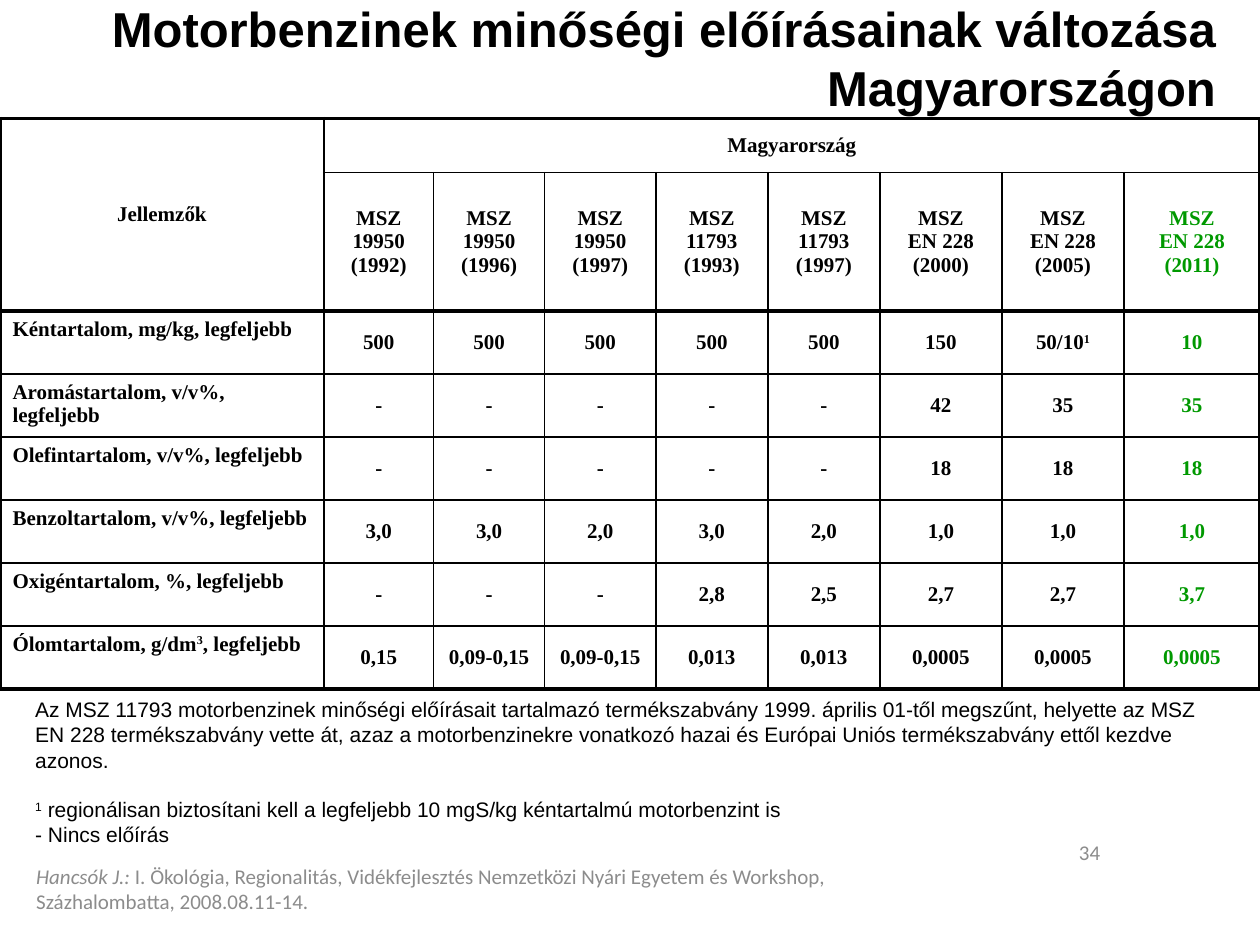
from lxml import etree
from pptx import Presentation
from pptx.dml.color import RGBColor
from pptx.enum import text
from pptx.oxml import ns
from pptx.util import Cm, Pt

BLACK = RGBColor(0x00, 0x00, 0x00)
GREEN = RGBColor(0x00, 0x99, 0x00)
GREY = RGBColor(0x8C, 0x8C, 0x8C)

COLUMN_WIDTHS = [6.53, 2.21, 2.24, 2.24, 2.26, 2.26, 2.46, 2.46, 2.74]
ROW_HEIGHTS = [1.09, 2.79] + [1.27] * 6

# Border weights in points: one per grid line, from the outer edge inwards
VERTICAL_LINES = [2.25, 1.5] + [1] * 7 + [2.25]
HORIZONTAL_LINES = [2.25, 1, 2] + [1] * 5 + [2.25]

# Text between two ^ marks is superscript
STANDARDS = [
    "MSZ\n19950\n(1992)", "MSZ\n19950\n(1996)", "MSZ\n19950\n(1997)",
    "MSZ\n11793\n(1993)", "MSZ\n11793\n(1997)",
    "MSZ\nEN 228\n(2000)", "MSZ\nEN 228\n(2005)", "MSZ\nEN 228\n(2011)",
]
LIMITS = [
    ["Kéntartalom, mg/kg, legfeljebb",
     "500", "500", "500", "500", "500", "150", "50/10^1^", "10"],
    ["Aromástartalom, v/v%, legfeljebb",
     "-", "-", "-", "-", "-", "42", "35", "35"],
    ["Olefintartalom, v/v%, legfeljebb",
     "-", "-", "-", "-", "-", "18", "18", "18"],
    ["Benzoltartalom, v/v%, legfeljebb",
     "3,0", "3,0", "2,0", "3,0", "2,0", "1,0", "1,0", "1,0"],
    ["Oxigéntartalom, %, legfeljebb",
     "-", "-", "-", "2,8", "2,5", "2,7", "2,7", "3,7"],
    ["Ólomtartalom, g/dm^3^, legfeljebb",
     "0,15", "0,09-0,15", "0,09-0,15", "0,013", "0,013",
     "0,0005", "0,0005", "0,0005"],
]
NOTES = (
    "Az MSZ 11793 motorbenzinek minőségi előírásait tartalmazó termékszabvány "
    "1999. április 01-től megszűnt, helyette az MSZ EN 228 termékszabvány vette "
    "át, azaz a motorbenzinekre vonatkozó hazai és Európai Uniós termékszabvány "
    "ettől kezdve azonos.\n"
    "^1^ regionálisan biztosítani kell a legfeljebb 10 mgS/kg kéntartalmú "
    "motorbenzint is\n"
    "- Nincs előírás"
)


def write(frame, content, font, size=12, color=BLACK, bold=False,
          align=text.PP_ALIGN.LEFT):
    for index, line in enumerate(content.split("\n")):
        paragraph = frame.paragraphs[0] if index == 0 else frame.add_paragraph()
        paragraph.alignment = align
        paragraph.font.name = font
        paragraph.font.size = Pt(size)
        paragraph.font.bold = bold
        paragraph.font.color.rgb = color
        for part, piece in enumerate(line.split("^")):
            if piece:
                run = paragraph.add_run()
                run.text = piece
                if part % 2:
                    run.font._element.set("baseline", "30000")


def add_text(slide, left, top, width, height, content, font,
             anchor=text.MSO_ANCHOR.MIDDLE, **style):
    box = slide.shapes.add_textbox(Cm(left), Cm(top), Cm(width), Cm(height))
    frame = box.text_frame
    frame.word_wrap = True
    frame.vertical_anchor = anchor
    write(frame, content, font, **style)
    return frame


def set_borders(cell, row, column):
    weights = {
        "a:lnL": VERTICAL_LINES[column],
        "a:lnR": VERTICAL_LINES[column + cell.span_width],
        "a:lnT": HORIZONTAL_LINES[row],
        "a:lnB": HORIZONTAL_LINES[row + cell.span_height],
    }
    properties = cell._tc.get_or_add_tcPr()
    for tag, weight in weights.items():
        line = etree.SubElement(properties, ns.qn(tag), w=str(Pt(weight)))
        fill = etree.SubElement(line, ns.qn("a:solidFill"))
        etree.SubElement(fill, ns.qn("a:srgbClr"), val=str(BLACK))


def add_limits_table(slide):
    contents = [
        ["Jellemzők", "Magyarország"] + [""] * 7,
        [""] + STANDARDS,
    ] + LIMITS
    table = slide.shapes.add_table(
        len(ROW_HEIGHTS), len(COLUMN_WIDTHS), Cm(0), Cm(2.39),
        Cm(sum(COLUMN_WIDTHS)), Cm(sum(ROW_HEIGHTS))).table
    for column, width in zip(table.columns, COLUMN_WIDTHS):
        column.width = Cm(width)
    for row, height in zip(table.rows, ROW_HEIGHTS):
        row.height = Cm(height)

    # Header spans
    table.cell(0, 0).merge(table.cell(1, 0))
    table.cell(0, 1).merge(table.cell(0, 8))

    for row, values in enumerate(contents):
        for column, value in enumerate(values):
            cell = table.cell(row, column)
            if cell.is_spanned:
                continue
            is_label = row > 1 and column == 0
            set_borders(cell, row, column)
            cell.fill.background()
            cell.vertical_anchor = (text.MSO_ANCHOR.TOP if is_label
                                    else text.MSO_ANCHOR.MIDDLE)
            write(cell.text_frame, value, "Times New Roman", bold=True,
                  color=GREEN if column == 8 else BLACK,
                  align=(text.PP_ALIGN.LEFT if is_label
                         else text.PP_ALIGN.CENTER))


def main():
    presentation = Presentation()
    presentation.slide_width = Cm(25.4)
    presentation.slide_height = Cm(19.05)
    slide = presentation.slides.add_slide(presentation.slide_layouts[6])

    # Footer: source and slide number
    source = add_text(
        slide, 0.48, 17.07, 17.37, 1.68, "Hancsók J.: ", "Calibri", color=GREY)
    source.paragraphs[0].runs[0].font.italic = True
    source.paragraphs[0].add_run().text = (
        "I. Ökológia, Regionalitás, Vidékfejlesztés Nemzetközi Nyári Egyetem "
        "és Workshop, Százhalombatta, 2008.08.11-14.")
    add_text(slide, 17.15, 16.54, 5.28, 1.27, "34", "Calibri", color=GREY,
             align=text.PP_ALIGN.RIGHT)

    # Title
    add_text(slide, 1.9, 0.2, 22.86, 1.9,
             "Motorbenzinek minőségi előírásainak változása Magyarországon",
             "Arial", size=28, bold=True, align=text.PP_ALIGN.RIGHT)

    # Limits by standard
    add_limits_table(slide)

    # Notes under the table
    notes = add_text(slide, 0.46, 13.92, 24.56, 3.33, NOTES, "Arial",
                     anchor=text.MSO_ANCHOR.TOP)
    notes.paragraphs[1].space_before = Pt(14)

    presentation.save("out.pptx")


if __name__ == "__main__":
    main()
